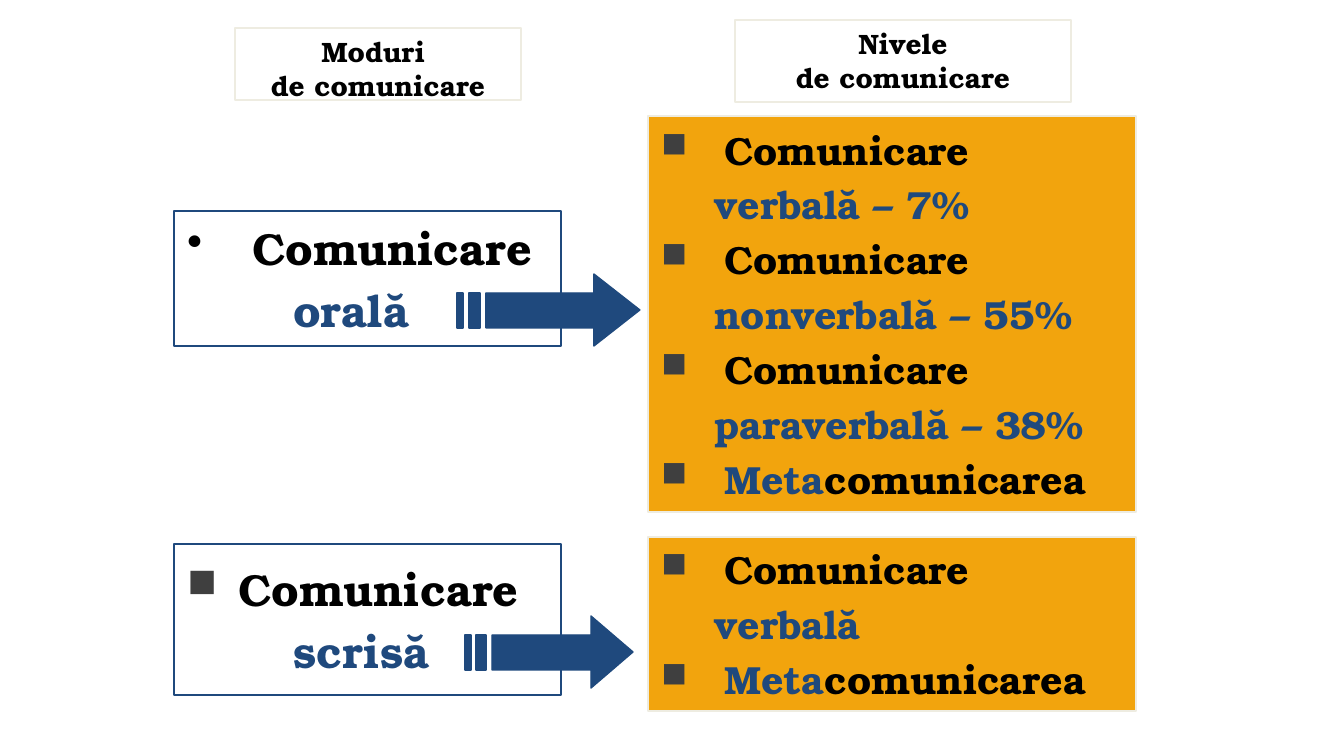
import pptx
import pptx.dml.color
import pptx.enum.shapes
import pptx.enum.text
import pptx.oxml.ns
import pptx.util
from lxml import etree

PX = 914400 / 134.4  # EMU in one px
FONT = "TeX Gyre Bonum"
COLORS = {
    "white": "FFFFFF",
    "black": "000000",
    "blue": "1F497D",
    "orange": "F2A40D",
    "cream": "EEECE1",
    "grey": "3F3F3F",
}
ALIGN = pptx.enum.text.PP_ALIGN
ANCHOR = pptx.enum.text.MSO_ANCHOR


def px(n):
    return pptx.util.Emu(round(n * PX))


def rgb(name):
    return pptx.dml.color.RGBColor.from_string(COLORS[name])


def style_shape(s, fill, line):
    if fill:
        s.fill.solid()
        s.fill.fore_color.rgb = rgb(fill)
    else:
        s.fill.background()
    s.line.color.rgb = rgb(line)
    s.line.width = pptx.util.Pt(0.75)


def add_box(slide, left, top, width, height, fill, line):
    sp = slide.shapes.add_shape(pptx.enum.shapes.MSO_SHAPE.RECTANGLE,
                                px(left), px(top), px(width), px(height))
    sp.shadow.inherit = False
    style_shape(sp, fill, line)
    return sp


def set_bullet(p, char, color=None):
    """Give a paragraph a bullet; a coloured one is slightly smaller."""
    pPr = p._p.get_or_add_pPr()
    qn = pptx.oxml.ns.qn
    if color:
        clr = etree.SubElement(pPr, qn("a:buClr"))
        etree.SubElement(clr, qn("a:srgbClr"), val=COLORS[color])
        etree.SubElement(pPr, qn("a:buSzPct"), val="90000")
    etree.SubElement(pPr, qn("a:buChar"), char=char)


def add_text(p, text, size, color="black"):
    """Add bold text to a paragraph; a newline becomes a line break."""
    for i, part in enumerate(text.split("\n")):
        if i:
            p.add_line_break()
        r = p.add_run()
        r.text = part
        r.font.name = FONT
        r.font.size = pptx.util.Pt(size)
        r.font.bold = True
        r.font.color.rgb = rgb(color)


def fill_heading(sp, text):
    tf = sp.text_frame
    tf.word_wrap = True
    tf.auto_size = pptx.enum.text.MSO_AUTO_SIZE.NONE
    tf.vertical_anchor = ANCHOR.TOP
    p = tf.paragraphs[0]
    p.alignment = ALIGN.CENTER
    add_text(p, text, 15)


def fill_list(sp, lines, size, text_indent, detail_indent,
              bullet="■", bullet_color="grey"):
    """Each line is a list of (text, colour); one that is only blue is a detail."""
    tf = sp.text_frame
    tf.word_wrap = True
    tf.vertical_anchor = ANCHOR.MIDDLE
    for i, line in enumerate(lines):
        p = tf.add_paragraph() if i else tf.paragraphs[0]
        p.alignment = ALIGN.LEFT
        p.space_before = pptx.util.Pt(size * 0.2)
        is_detail = all(color == "blue" for _, color in line)
        indent = detail_indent if is_detail else text_indent
        pPr = p._p.get_or_add_pPr()
        pPr.set("marL", str(px(indent)))
        pPr.set("indent", str(0 if is_detail else -px(indent)))
        if not is_detail:
            set_bullet(p, bullet, bullet_color)
        for text, color in line:
            add_text(p, text, size, color)


def add_striped_arrow(slide, top, stripes, body, head, tip):
    """Arrow 72 px high with a 35 px shaft, led by vertical stripes."""
    shaft_top, shaft_bottom, bottom = top + 19, top + 54, top + 72
    outlines = [[(head, top), (head, shaft_top), (body, shaft_top),
                 (body, shaft_bottom), (head, shaft_bottom), (head, bottom),
                 (tip, top + 36)]]
    outlines += [[(x1, shaft_top), (x1, shaft_bottom),
                  (x2, shaft_bottom), (x2, shaft_top)] for x1, x2 in stripes]
    builder = slide.shapes.build_freeform(*outlines[0][0], scale=PX)
    for i, points in enumerate(outlines):
        if i:
            builder.move_to(*points[0])
        builder.add_line_segments(points[1:], close=True)
    s = builder.convert_to_shape()
    s.shadow.inherit = False
    style_shape(s, "blue", "blue")


def main():
    prs = pptx.Presentation()
    prs.slide_width, prs.slide_height = px(1344), px(756)
    slide = prs.slides.add_slide(prs.slide_layouts[5])

    # Column headings
    title = slide.shapes.title
    title.left, title.top, title.width, title.height = map(px, (235, 28, 286, 72))
    style_shape(title, "white", "cream")
    fill_heading(title, "Moduri \nde comunicare")
    levels_heading = add_box(slide, 735, 20, 336, 82, None, "cream")
    fill_heading(levels_heading, "Nivele\nde comunicare")

    communication = [("Comunicare", "black")]
    meta = [("Meta", "blue"), ("comunicarea", "black")]

    # Modes of communication
    oral = add_box(slide, 174, 211, 387, 135, "white", "blue")
    fill_list(oral, [communication, [("orală", "blue")]], 24, 65, 106,
              bullet="•", bullet_color=None)
    written = add_box(slide, 174, 544, 387, 151, "white", "blue")
    fill_list(written, [communication, [("scrisă", "blue")]], 24, 51, 106)

    # Levels of each mode
    oral_lines = []
    for level in ("verbală – 7%", "nonverbală – 55%", "paraverbală – 38%"):
        oral_lines += [communication, [(level, "blue")]]
    oral_levels = add_box(slide, 648, 116, 488, 396, "orange", "cream")
    fill_list(oral_levels, oral_lines + [meta], 21, 63, 53)
    written_levels = add_box(slide, 648, 537, 488, 174, "orange", "cream")
    fill_list(written_levels, [communication, [("verbală", "blue")], meta],
              21, 63, 53)

    # Arrows from mode to levels
    add_striped_arrow(slide, 274, [(469, 480), (457, 463)], 486, 594, 640)
    add_striped_arrow(slide, 616, [(476, 486), (465, 471)], 492, 591, 633)

    prs.save("out.pptx")


if __name__ == "__main__":
    main()
